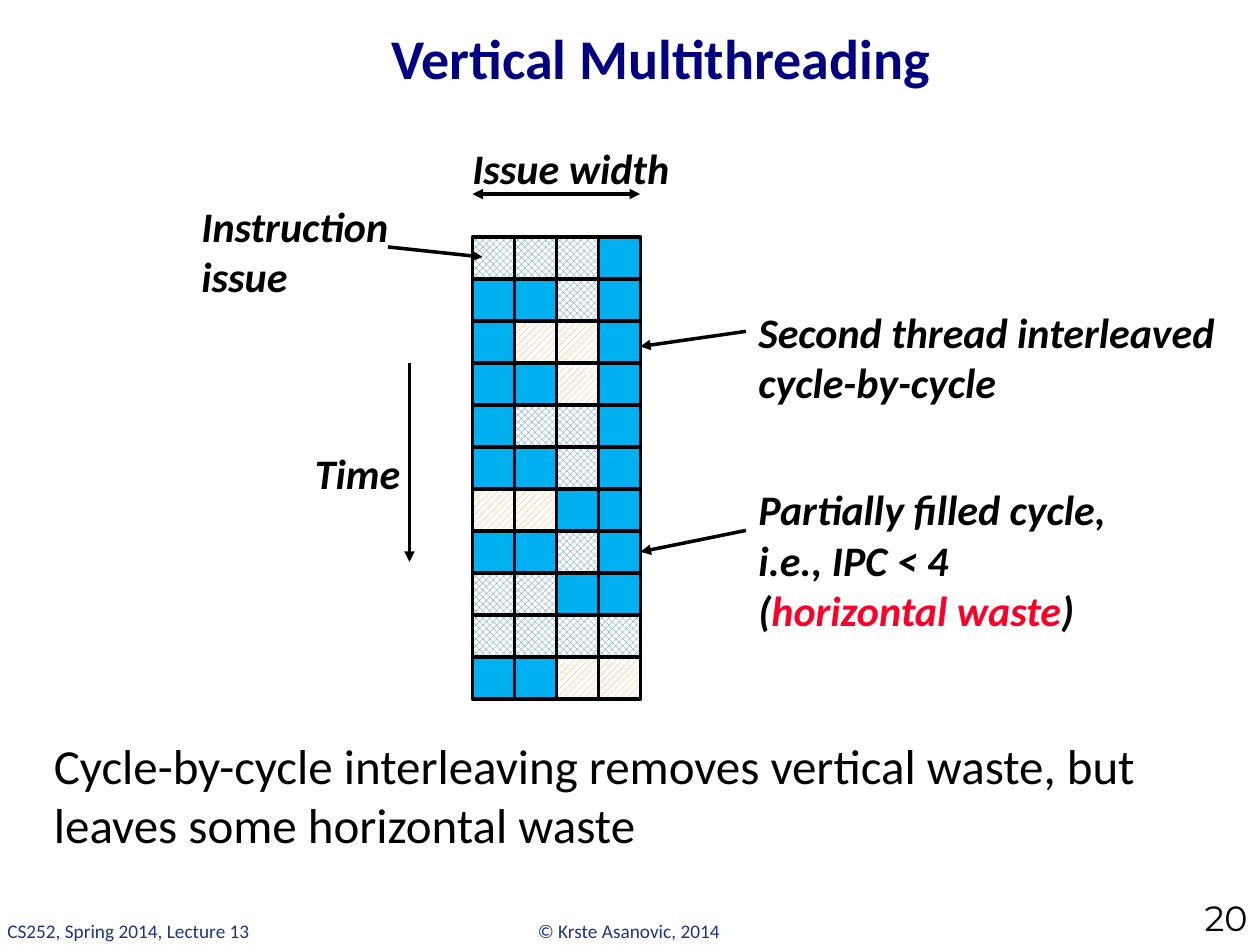
"""Build the Vertical Multithreading slide."""
from lxml import etree
from pptx import Presentation
from pptx.dml.color import RGBColor
from pptx.enum.dml import MSO_PATTERN
from pptx.enum.shapes import MSO_CONNECTOR, MSO_SHAPE
from pptx.enum.text import MSO_ANCHOR, MSO_AUTO_SIZE, PP_ALIGN
from pptx.oxml.ns import qn
from pptx.util import Inches, Pt

STRAIGHT = MSO_CONNECTOR.STRAIGHT
RECTANGLE = MSO_SHAPE.RECTANGLE
DIAMONDS = MSO_PATTERN.SOLID_DIAMOND
DIAGONALS = MSO_PATTERN.WIDE_UPWARD_DIAGONAL
TOP, MIDDLE, BOTTOM = MSO_ANCHOR.TOP, MSO_ANCHOR.MIDDLE, MSO_ANCHOR.BOTTOM
LEFT, CENTER, RIGHT = PP_ALIGN.LEFT, PP_ALIGN.CENTER, PP_ALIGN.RIGHT
NO_FIT, FIT_SHAPE = MSO_AUTO_SIZE.NONE, MSO_AUTO_SIZE.SHAPE_TO_FIT_TEXT

BLACK = RGBColor(0x00, 0x00, 0x00)
WHITE = RGBColor(0xFF, 0xFF, 0xFF)
NAVY = RGBColor(0x00, 0x00, 0x81)
FOOTER_BLUE = RGBColor(0x1B, 0x33, 0x84)
RED = RGBColor(0xFC, 0x01, 0x28)
IDLE_BLUE = RGBColor(0x00, 0xB0, 0xF0)
TEAL = RGBColor(0x2C, 0x7C, 0x9F)
ORANGE = RGBColor(0xFF, 0x99, 0x33)

CELL = 1 / 3
GRID_LEFT, GRID_TOP = 3.75, 1.88
THREAD_FILLS = {"1": (DIAMONDS, TEAL), "2": (DIAGONALS, ORANGE)}
ISSUE_SLOTS = (
    "111-", "--1-", "-22-", "--2-", "-11-", "--1-",
    "22--", "--1-", "11--", "1111", "--22",
)
LABEL = {"size": 24, "bold": True, "italic": True, "fit": FIT_SHAPE}
FOOTER = {"size": 11, "color": FOOTER_BLUE, "wrap": False, "fit": FIT_SHAPE}


def write_text(tf, *paragraphs, size, color=BLACK, font="Calibri", bold=False,
               italic=False, align=LEFT, anchor=TOP, wrap=True, fit=NO_FIT):
    """Write paragraphs, each a string or a list of (text, colour) runs."""
    tf.word_wrap, tf.auto_size, tf.vertical_anchor = wrap, fit, anchor
    for i, content in enumerate(paragraphs):
        p = tf.add_paragraph() if i else tf.paragraphs[0]
        p.alignment = align
        runs = [(content, color)] if isinstance(content, str) else content
        for text, run_color in runs:
            r = p.add_run()
            r.text = text
            r.font.name, r.font.size = font, Pt(size)
            r.font.bold, r.font.italic = bold, italic
            r.font.color.rgb = run_color


def place(sp, left, top, width, height):
    """Set the position and size of a shape."""
    sp.left, sp.top = Inches(left), Inches(top)
    sp.width, sp.height = Inches(width), Inches(height)


def add_text(s, box, *paragraphs, **style):
    """Add a formatted text box."""
    sp = s.shapes.add_textbox(*map(Inches, box))
    write_text(sp.text_frame, *paragraphs, **style)


def add_title(s, text):
    """Fill and position the title placeholder."""
    sp = s.shapes.title
    place(sp, 1.33, 0.08, 7.83, 0.75)
    write_text(sp.text_frame, text, size=32, color=NAVY, bold=True,
               align=CENTER, anchor=MIDDLE)


def add_slot(s, row, col, kind):
    """Add one issue slot, patterned by thread or solid when idle."""
    sp = s.shapes.add_shape(
        RECTANGLE, Inches(GRID_LEFT + col * CELL), Inches(GRID_TOP + row * CELL),
        Inches(CELL), Inches(CELL))
    sp.shadow.inherit = False
    if kind in THREAD_FILLS:
        pattern, color = THREAD_FILLS[kind]
        sp.fill.patterned()
        sp.fill.pattern = pattern
        sp.fill.fore_color.rgb, sp.fill.back_color.rgb = color, WHITE
    else:
        sp.fill.solid()
        sp.fill.fore_color.rgb = IDLE_BLUE
    sp.line.color.rgb, sp.line.width = BLACK, Pt(2)
    return sp


def add_arrow(s, start, end, double=False):
    """Add an arrow to end, with a head at both ends if double."""
    sp = s.shapes.add_connector(STRAIGHT, *map(Inches, start + end))
    sp.line.color.rgb, sp.line.width = BLACK, Pt(2)
    ln = sp.line._get_or_add_ln()
    for tag in ("a:headEnd", "a:tailEnd") if double else ("a:tailEnd",):
        etree.SubElement(ln, qn(tag), type="triangle")
    etree.SubElement(sp._element.spPr, qn("a:effectLst"))
    return sp


def main():
    """Build and save the slide."""
    prs = Presentation()
    prs.slide_width, prs.slide_height = Inches(10), Inches(7.5)
    s = prs.slides.add_slide(prs.slide_layouts[5])

    add_text(s, (4.17, 7.25, 1.67, 0.29), "© Krste Asanovic, 2014", **FOOTER)
    add_text(s, (-0.04, 7.25, 2.14, 0.29), "CS252, Spring 2014, Lecture 13", **FOOTER)
    add_title(s, "Vertical Multithreading")
    add_text(s, (9.08, 7.24, 0.92, 0.26), "20", size=20, font="Montserrat",
             align=RIGHT, anchor=BOTTOM)
    add_text(s, (0.33, 5.79, 9.42, 0.92),
             "Cycle-by-cycle interleaving removes vertical waste, "
             "but leaves some horizontal waste", size=28)

    slots = [[add_slot(s, row, col, kind) for col, kind in enumerate(kinds)]
             for row, kinds in enumerate(ISSUE_SLOTS)]

    add_arrow(s, (3.75, 1.54), (5.08, 1.54), double=True)
    add_text(s, (3.65, 1.08, 1.86, 0.5), "Issue width", wrap=False, **LABEL)
    add_arrow(s, (3.25, 2.88), (3.25, 4.46))
    add_text(s, (2.4, 3.5, 0.97, 0.5), "Time", wrap=False, **LABEL)
    add_text(s, (5.92, 2.38, 3.85, 0.91),
             "Second thread interleaved cycle-by-cycle", **LABEL)
    add_arrow(s, (5.92, 2.63), (5.08, 2.75))
    add_text(s, (1.5, 1.54, 2.1, 0.91), "Instruction issue", **LABEL)
    add_arrow(s, (3.08, 1.96), (3.83, 2.04))
    add_text(s, (5.92, 3.79, 3.5, 1.31), "Partially filled cycle, i.e., IPC < 4",
             [("(", BLACK), ("horizontal waste", RED), (")", BLACK)], **LABEL)
    partial_cycle = add_arrow(s, (5.92, 4.21), (5.08, 4.38))
    partial_cycle.end_connect(slots[7][3], 3)

    prs.save("out.pptx")


if __name__ == "__main__":
    main()
